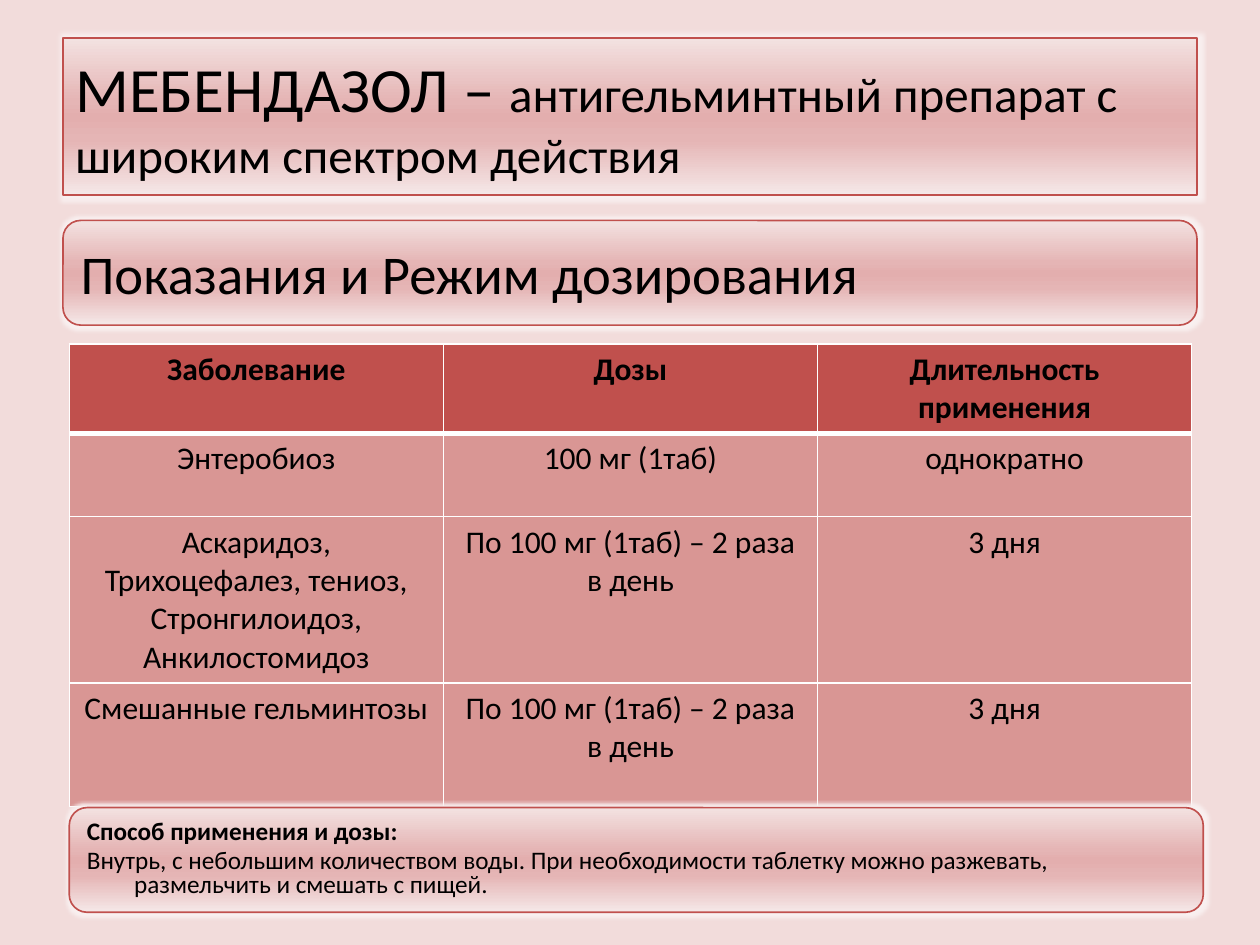
from dataclasses import dataclass

from lxml import etree
from pptx import Presentation
from pptx.dml.color import RGBColor
from pptx.enum.shapes import MSO_SHAPE
from pptx.enum.text import MSO_ANCHOR, PP_ALIGN
from pptx.oxml.ns import qn
from pptx.util import Pt

ROUNDED = MSO_SHAPE.ROUNDED_RECTANGLE
MIDDLE = MSO_ANCHOR.MIDDLE
LEFT, CENTER = PP_ALIGN.LEFT, PP_ALIGN.CENTER

FONT = "Calibri"
COLORS = {
    "background": "F2DCDB",
    "accent": "C0504D",
    "body_row": "D99694",
    "border": "FFFFFF",
    "glow": "F9F0F0",
    "text": "000000",
}
# Position in percent and colour of each panel gradient stop
GRADIENT = [(0, "F3E2E1"), (40, "E5B5B5"), (50, "E3AEAE"), (65, "E5B5B5"), (100, "F5E8E8")]


@dataclass
class Span:
    text: str
    size: float
    bold: bool = False


@dataclass
class Panel:
    left: float
    top: float
    width: float
    height: float
    paragraphs: list[list[Span]]
    corner: float = 0.17
    hanging: float = 0
    line_spacing: float = 1.0


PANELS = [
    # Title
    Panel(36, 21.6, 648, 90, [[
        Span("МЕБЕНДАЗОЛ – ", 36),
        Span("антигельминтный препарат с широким спектром действия", 28),
    ]], corner=0),
    # Section heading
    Panel(36, 126, 648, 59.8, [[Span("Показания и Режим дозирования", 31.2)]], hanging=27),
    # Directions for use
    Panel(39.6, 461.5, 648, 59.8, [
        [Span("Способ применения и дозы:", 14.4, True)],
        [Span("Внутрь, с небольшим количеством воды. При необходимости таблетку "
              "можно разжевать, размельчить и смешать с пищей.", 14.4)],
    ], hanging=27, line_spacing=0.8),
]

DOSE_TWICE = "По 100 мг (1таб) – 2 раза в день"
DOSES = [
    ["Заболевание", "Дозы", "Длительность применения"],
    ["Энтеробиоз", "100 мг (1таб)", "однократно"],
    ["Аскаридоз, Трихоцефалез, тениоз, Стронгилоидоз, Анкилостомидоз", DOSE_TWICE, "3 дня"],
    ["Смешанные гельминтозы", DOSE_TWICE, "3 дня"],
]
ROW_HEIGHTS = [50.4, 47.5, 95, 70.6]
COLUMN_WIDTH = 213.8


def rgb(name: str) -> RGBColor:
    return RGBColor.from_string(COLORS[name])


def add_color(parent, color: str) -> None:
    etree.SubElement(parent, qn("a:srgbClr"), val=color)


def format_run(run, size: float, bold: bool) -> None:
    run.font.name = FONT
    run.font.size = Pt(size)
    run.font.bold = bold
    run.font.color.rgb = rgb("text")


def paint_panel(box) -> None:
    """Vertical gradient, thin outline and a pale glow."""
    box.fill.gradient()
    box.fill.gradient_angle = 270
    properties = box._element.spPr
    stops = properties.find(".//" + qn("a:gsLst"))
    for stop in list(stops):
        stops.remove(stop)
    for percent, color in GRADIENT:
        add_color(etree.SubElement(stops, qn("a:gs"), pos=str(percent * 1000)), color)
    box.line.color.rgb = rgb("accent")
    box.line.width = Pt(0.94)
    box.shadow.inherit = False
    effects = properties.find(qn("a:effectLst"))
    add_color(etree.SubElement(effects, qn("a:glow"), rad=str(Pt(5))), COLORS["glow"])


def draw_panel(page, panel: Panel) -> None:
    box = page.shapes.add_shape(
        ROUNDED, Pt(panel.left), Pt(panel.top), Pt(panel.width), Pt(panel.height))
    box.adjustments[0] = panel.corner
    paint_panel(box)
    frame = box.text_frame
    frame.word_wrap = True
    frame.vertical_anchor = MIDDLE
    for index, spans in enumerate(panel.paragraphs):
        para = frame.add_paragraph() if index else frame.paragraphs[0]
        para.alignment = LEFT
        para.line_spacing = panel.line_spacing
        if panel.hanging:
            para.space_before = Pt(spans[0].size * 0.2)
            indents = para._p.get_or_add_pPr()
            indents.set("marL", str(Pt(panel.hanging)))
            indents.set("indent", str(-Pt(panel.hanging)))
        for span in spans:
            run = para.add_run()
            run.text = span.text
            format_run(run, span.size, span.bold)


def add_borders(cell, row: int) -> None:
    """White grid with a heavier rule under the header."""
    widths = {"L": 1, "R": 1, "T": 3 if row == 1 else 1, "B": 3 if row == 0 else 1}
    properties = cell._tc.get_or_add_tcPr()
    for side, width in widths.items():
        line = etree.SubElement(properties, qn(f"a:ln{side}"), w=str(Pt(width)))
        add_color(etree.SubElement(line, qn("a:solidFill")), COLORS["border"])


def draw_doses(page) -> None:
    columns = len(DOSES[0])
    table = page.shapes.add_table(
        len(DOSES), columns, Pt(39.6), Pt(196.6),
        Pt(COLUMN_WIDTH * columns), Pt(sum(ROW_HEIGHTS))).table
    for column in table.columns:
        column.width = Pt(COLUMN_WIDTH)
    for row, (height, texts) in enumerate(zip(ROW_HEIGHTS, DOSES)):
        table.rows[row].height = Pt(height)
        for column, text in enumerate(texts):
            cell = table.cell(row, column)
            add_borders(cell, row)
            cell.fill.solid()
            cell.fill.fore_color.rgb = rgb("body_row" if row else "accent")
            para = cell.text_frame.paragraphs[0]
            para.text = text
            para.alignment = CENTER
            format_run(para.runs[0], 18, row == 0)


def main() -> None:
    deck = Presentation()
    deck.slide_width, deck.slide_height = Pt(720), Pt(540)
    page = deck.slides.add_slide(deck.slide_layouts[6])
    page.background.fill.solid()
    page.background.fill.fore_color.rgb = rgb("background")

    # The directions panel lies over the lower edge of the table
    title, heading, directions = PANELS
    draw_panel(page, title)
    draw_panel(page, heading)
    draw_doses(page)
    draw_panel(page, directions)
    deck.save("out.pptx")


if __name__ == "__main__":
    main()
